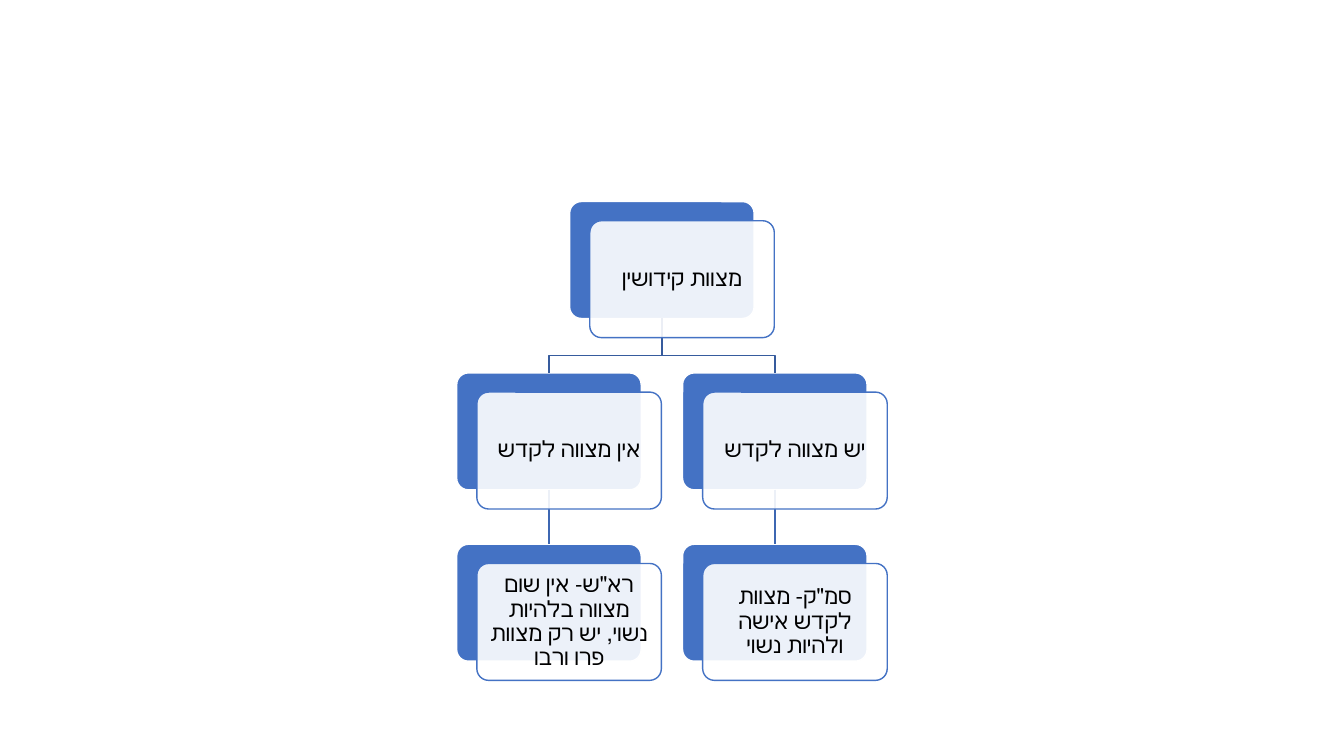
from typing import NamedTuple

from lxml import etree
from pptx import Presentation
from pptx.dml.color import RGBColor
from pptx.enum.shapes import MSO_CONNECTOR as Connector, MSO_SHAPE as Preset
from pptx.enum.text import MSO_ANCHOR as Anchor, PP_ALIGN as Align
from pptx.oxml.ns import qn
from pptx.shapes.autoshape import Shape
from pptx.util import Inches, Pt

BLUE = RGBColor(0x44, 0x72, 0xC4)
BRANCH_BLUE = RGBColor(0x36, 0x5B, 0x9D)
STEM_BLUE = RGBColor(0x3E, 0x67, 0xB2)
WHITE = RGBColor(0xFF, 0xFF, 0xFF)
BLACK = RGBColor(0x00, 0x00, 0x00)

# Tree geometry in inches
LEFT, TOP = 4.53, 2.0
HALF_COLUMN, ROW = 1.12, 1.7
CARD_WIDTH, CARD_HEIGHT = 1.83, 1.16
FRONT_DX, FRONT_DY = 0.2, 0.19
BEND_DROP = 0.37


class Node(NamedTuple):
    text: str
    column: int  # counted in half columns
    row: int
    parent: int | None = None

    @property
    def left(self) -> float:
        return LEFT + self.column * HALF_COLUMN

    @property
    def top(self) -> float:
        return TOP + self.row * ROW

    @property
    def center(self) -> float:
        return self.left + CARD_WIDTH / 2

    @property
    def bottom(self) -> float:
        return self.top + CARD_HEIGHT


NODES = [
    Node("מצוות קידושין", 1, 0),
    Node("יש מצווה לקדש", 2, 1, parent=0),
    Node('סמ"ק- מצוות לקדש אישה ולהיות נשוי', 2, 2, parent=1),
    Node("אין מצווה לקדש", 0, 1, parent=0),
    Node('רא"ש- אין שום מצווה בלהיות נשוי, יש רק מצוות פרו ורבו', 0, 2, parent=3),
]


def add_card(shapes, left: float, top: float, fill: RGBColor, line: RGBColor) -> Shape:
    card = shapes.add_shape(Preset.ROUNDED_RECTANGLE, Inches(left), Inches(top),
                            Inches(CARD_WIDTH), Inches(CARD_HEIGHT))
    card.adjustments[0] = 0.1
    card.shadow.inherit = False
    card.fill.solid()
    card.fill.fore_color.rgb = fill
    card.line.color.rgb = line
    card.line.width = Pt(1)
    return card


def set_opacity(card: Shape, percent: int) -> None:
    color = card.fill._xPr.find(qn("a:solidFill"))[0]
    etree.SubElement(color, qn("a:alpha"), val=str(percent * 1000))


def write_text(card: Shape, text: str, *, size: float = 16, font: str = "Calibri",
               color: RGBColor = BLACK, inset: float = 0.07) -> None:
    frame = card.text_frame
    frame.word_wrap = True
    frame.vertical_anchor = Anchor.MIDDLE
    frame.margin_left = frame.margin_right = Inches(inset)
    frame.margin_top = frame.margin_bottom = Inches(inset)
    paragraph = frame.paragraphs[0]
    paragraph.alignment = Align.CENTER
    paragraph.line_spacing = 0.9
    paragraph._p.get_or_add_pPr().set("rtl", "1")
    run = paragraph.add_run()
    run.text = text
    run.font.size = Pt(size)
    run.font.name = font
    run.font.color.rgb = color


def add_stem(shapes, upper: Shape, lower: Shape) -> None:
    stem = shapes.add_connector(Connector.STRAIGHT, 0, 0, 0, 0)
    stem.begin_connect(upper, 2)
    stem.end_connect(lower, 0)
    stem.line.color.rgb = STEM_BLUE
    stem.line.width = Pt(1)
    etree.SubElement(stem._element.spPr, qn("a:effectLst"))


def add_branch(shapes, parent: Node, child: Node) -> None:
    bend = parent.bottom + BEND_DROP
    corners = [(parent.center, bend), (child.center, bend), (child.center, child.top)]
    builder = shapes.build_freeform(Inches(parent.center), Inches(parent.bottom))
    builder.add_line_segments([(Inches(x), Inches(y)) for x, y in corners], close=False)
    branch = builder.convert_to_shape()
    branch.shadow.inherit = False
    branch.fill.background()
    branch.line.color.rgb = BRANCH_BLUE
    branch.line.width = Pt(1)


def main() -> None:
    deck = Presentation()
    deck.slide_width, deck.slide_height = Inches(13.33), Inches(7.5)
    shapes = deck.slides.add_slide(deck.slide_layouts[6]).shapes

    # Blue cards at the back
    back_cards = [add_card(shapes, node.left, node.top, BLUE, WHITE) for node in NODES]

    # Links from each parent to its child
    for node, back_card in zip(NODES, back_cards):
        if node.parent is None:
            continue
        parent = NODES[node.parent]
        if parent.column == node.column:
            add_stem(shapes, back_cards[node.parent], back_card)
        else:
            add_branch(shapes, parent, node)

    # Translucent cards with the text
    for node in NODES:
        front_card = add_card(shapes, node.left + FRONT_DX, node.top + FRONT_DY, WHITE, BLUE)
        set_opacity(front_card, 90)
        write_text(front_card, node.text)

    deck.save("out.pptx")


if __name__ == "__main__":
    main()
